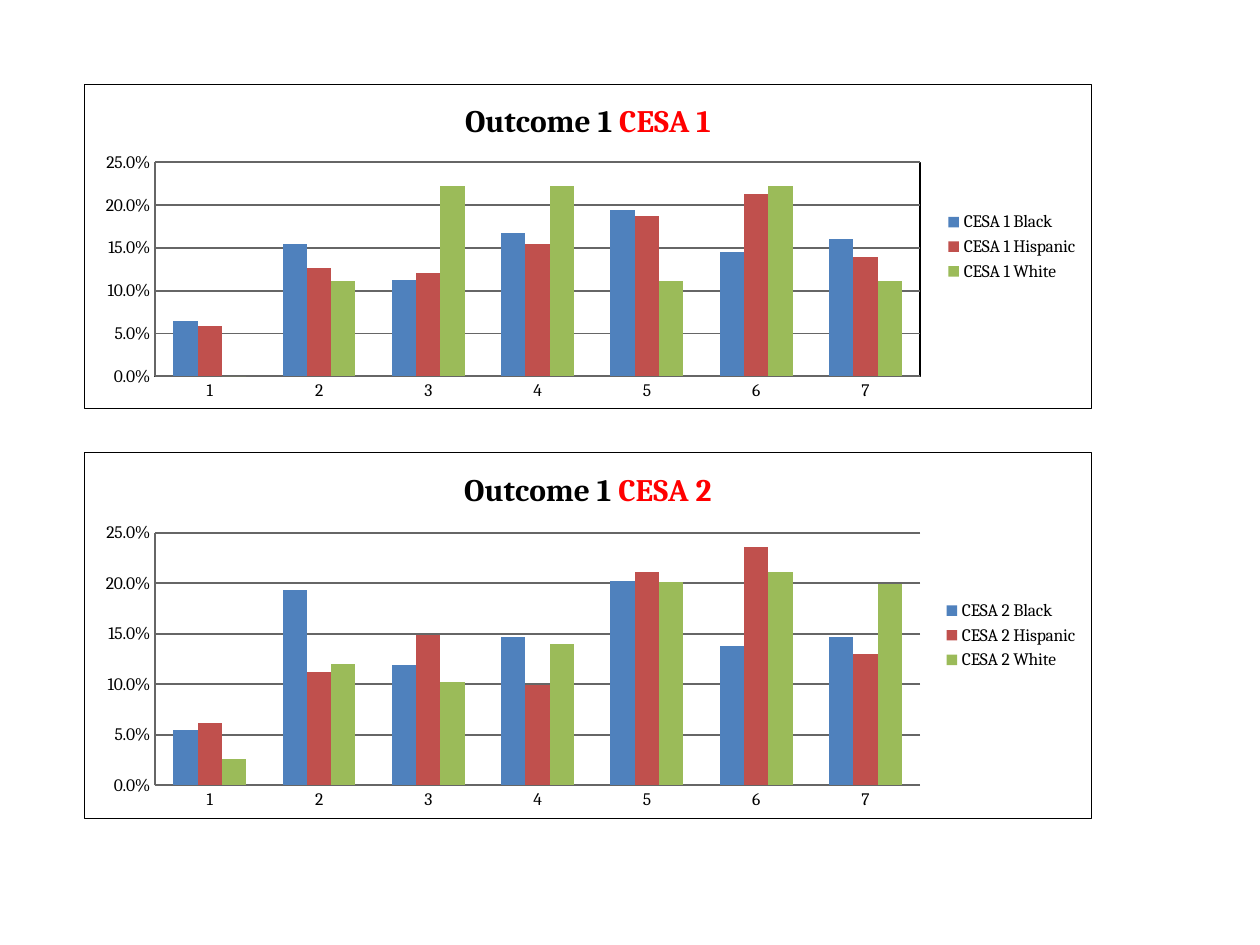
from lxml.etree import SubElement
from pptx import Presentation
from pptx.chart.data import CategoryChartData
from pptx.dml.color import RGBColor
from pptx.enum.chart import XL_CHART_TYPE, XL_LEGEND_POSITION, XL_TICK_MARK
from pptx.oxml import parse_xml
from pptx.oxml.ns import nsdecls, qn
from pptx.util import Inches, Pt


def color(value):
    return RGBColor.from_string(value)


def add_span(para, text, size=18, bold=True, fill="000000", face="Cambria"):
    span = para.add_run()
    span.text = text
    span.font.size = Pt(size)
    span.font.bold = bold
    span.font.name = face
    span.font.color.rgb = color(fill)


deck = Presentation()
deck.slide_width = Inches(10)
deck.slide_height = Inches(7.5)
page = deck.slides.add_slide(deck.slide_layouts[6])

left = deck.slide_width / 15
width = deck.slide_width * 0.8
row = deck.slide_height / 90
groups = {"Black": "4F81BD", "Hispanic": "C0504D", "White": "9BBB59"}
outline = (
    f'<c:spPr {nsdecls("c", "a")}><a:noFill/><a:ln w="9525"><a:solidFill>'
    '<a:srgbClr val="000000"/></a:solidFill></a:ln></c:spPr>'
)

regions = [
    {
        "name": "CESA 1", "top": 8, "rows": 31, "framed": True,
        "plot": {"x": 0.07, "y": 0.24, "w": 0.76, "h": 0.66},
        "rates": [
            [0.065, 0.155, 0.113, 0.167, 0.194, 0.145, 0.161],
            [0.059, 0.126, 0.121, 0.155, 0.187, 0.213, 0.139],
            [0, 0.111, 0.222, 0.222, 0.111, 0.222, 0.111],
        ],
    },
    {
        "name": "CESA 2", "top": 43, "rows": 35, "framed": False,
        "plot": {"x": 0.07, "y": 0.22, "w": 0.76, "h": 0.69},
        "rates": [
            [0.055, 0.193, 0.119, 0.147, 0.202, 0.138, 0.147],
            [0.062, 0.112, 0.149, 0.099, 0.211, 0.236, 0.13],
            [0.026, 0.12, 0.102, 0.14, 0.201, 0.211, 0.199],
        ],
    },
]

for region in regions:
    data = CategoryChartData(number_format="0.0%")
    data.categories = [str(number) for number in range(1, 8)]
    for group, rates in zip(groups, region["rates"]):
        data.add_series(f"{region['name']} {group}", rates)
    chart = page.shapes.add_chart(
        XL_CHART_TYPE.COLUMN_CLUSTERED, int(left), int(region["top"] * row),
        int(width), int(region["rows"] * row), data,
    ).chart
    chart.font.name = "Cambria"
    chart.font.size = Pt(10)
    chart.font.color.rgb = color("000000")

    para = chart.chart_title.text_frame.paragraphs[0]
    add_span(para, "Outcome 1 ")
    add_span(para, region["name"], fill="FF0000")
    chart.chart_title.include_in_layout = False

    chart.has_legend = True
    chart.legend.position = XL_LEGEND_POSITION.RIGHT
    chart.legend.include_in_layout = False

    plot = chart.plots[0]
    plot.gap_width = 150
    plot.vary_by_categories = False
    for series, fill in zip(plot.series, groups.values()):
        series.format.fill.solid()
        series.format.fill.fore_color.rgb = color(fill)

    rate_axis = chart.value_axis
    rate_axis.minimum_scale = 0
    rate_axis.maximum_scale = 0.25
    rate_axis.major_unit = 0.05
    rate_axis.tick_labels.number_format = "0.0%"
    rate_axis.tick_labels.number_format_is_linked = False
    rate_axis.has_major_gridlines = True
    for axis in (chart.category_axis, rate_axis):
        axis.major_tick_mark = XL_TICK_MARK.NONE
        axis.minor_tick_mark = XL_TICK_MARK.NONE
    for line in (rate_axis.major_gridlines.format.line,
                 rate_axis.format.line, chart.category_axis.format.line):
        line.color.rgb = color("666666")
        line.width = Pt(0.75)
    rate_axis.major_gridlines.format.line.width = Pt(1)

    space = chart.element
    space.find(qn("c:chart")).addnext(parse_xml(outline))
    area = space.find(qn("c:chart")).find(qn("c:plotArea"))
    for old in area.findall(qn("c:layout")):
        area.remove(old)
    layout = parse_xml(f'<c:layout {nsdecls("c")}/>')
    area.insert(0, layout)
    manual = SubElement(layout, qn("c:manualLayout"))
    settings = {"layoutTarget": "inner", "xMode": "edge", "yMode": "edge"}
    for tag, value in (settings | region["plot"]).items():
        SubElement(manual, qn(f"c:{tag}")).set("val", str(value))
    if region["framed"]:
        area.append(parse_xml(outline))

deck.save("out.pptx")
